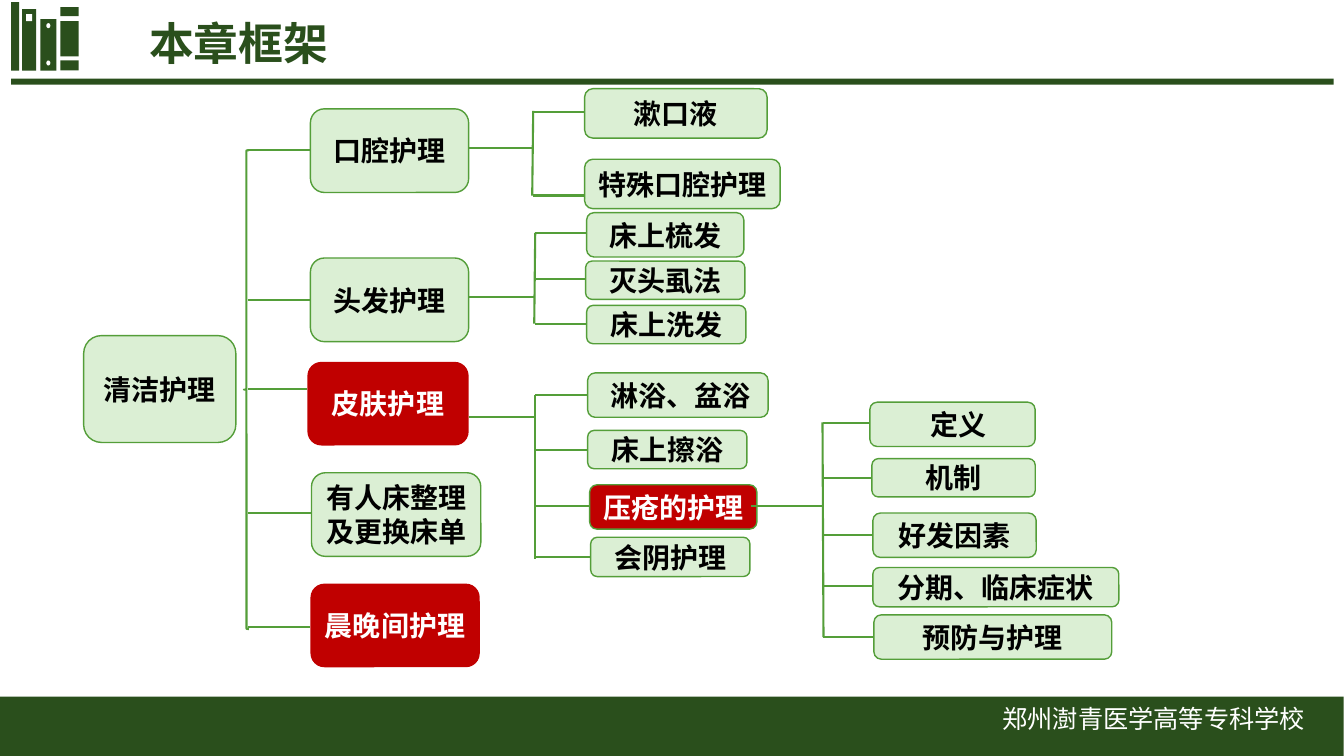
from lxml import etree
from pptx import Presentation
from pptx.dml.color import RGBColor
from pptx.enum import shapes, text
from pptx.oxml.ns import qn
from pptx.util import Emu, Pt

PX = 9144
FONT = "Noto Sans CJK SC"
COLOURS = {
    "forest": "2A4F1C",
    "leaf": "549E39",
    "mint": "DBEFD4",
    "red": "C00000",
    "white": "FFFFFF",
    "black": "000000",
}

ROOT = ("清洁护理", 83, 333, 151, 106)
CHAPTER_SPINE = 246
CHAPTERS = [
    ("口腔护理", 308, 108, 157, 83, 149),
    ("头发护理", 308, 256, 157, 83, 298),
    ("皮肤护理", 305, 359, 160, 83, 386),
    ("有人床整理及更换床单", 309, 469, 168, 83, 509),
    ("晨晚间护理", 308, 579, 168, 83, 622),
]
BRANCHES = [
    {"stem": (465, 147), "spine": (529, 110, 528, 194), "leaves": [
        ("漱口液", 580, 88, 181, 49, 111),
        ("特殊口腔护理", 580, 158, 194, 49, 194),
    ]},
    {"stem": (465, 295), "spine": (531, 231, 530, 321), "leaves": [
        ("床上梳发", 582, 211, 156, 44, 231),
        ("灭头虱法", 581, 259, 158, 38, 277),
        ("床上洗发", 582, 303, 158, 38, 321),
    ]},
    {"stem": (465, 414), "spine": (531, 392, 531, 555), "leaves": [
        ("淋浴、盆浴", 583, 370, 179, 44, 392),
        ("床上擦浴", 583, 427, 158, 38, 446),
        ("压疮的护理", 585, 481, 166, 44, 502),
        ("会阴护理", 586, 533, 158, 39, 553),
    ]},
    {"stem": (745, 502), "spine": (816, 419, 817, 632), "leaves": [
        ("定义", 863, 399, 164, 44, 420),
        ("机制", 865, 455, 162, 38, 474),
        ("好发因素", 866, 509, 162, 44, 531),
        ("分期、临床症状", 866, 563, 244, 39, 581),
        ("预防与护理", 867, 610, 236, 44, 632),
    ]},
]
FILLED_RED = {"皮肤护理", "晨晚间护理"}
OUTLINED_RED = {"压疮的护理"}
SHIFTS = {"定义": 12, "淋浴、盆浴": 6}
BOOKS = [
    (11, 2, 8, 68), (22, 9, 14, 61), (40, 19, 16, 51),
    (60, 7, 18, 9), (60, 21, 18, 35), (60, 60, 18, 10),
]
BOOK_DOTS = [(46, 23, 4, 5), (46, 60, 4, 5)]


def px(*lengths):
    return [Emu(length * PX) for length in lengths]


def rgb(name):
    return RGBColor.from_string(COLOURS[name])


def write(holder, content, size, colour="black", bold=True, align="CENTER",
          anchor="MIDDLE", left=7, right=7, wrap=True):
    frame = holder.text_frame
    frame.word_wrap = wrap
    frame.vertical_anchor = getattr(text.MSO_ANCHOR, anchor)
    frame.margin_left, frame.margin_right = px(left, right)
    frame.margin_top = frame.margin_bottom = 0
    paragraph = frame.paragraphs[0]
    paragraph.alignment = getattr(text.PP_ALIGN, align)
    run = paragraph.add_run()
    run.text = content
    font = run.font
    font.name, font.size, font.bold = FONT, Pt(size), bold
    font.color.rgb = rgb(colour)
    east_asian = etree.SubElement(run._r.get_or_add_rPr(), qn("a:ea"))
    east_asian.set("typeface", FONT)


def block(slide, kind, bounds, fill=None, outline=None, weight=1):
    preset = getattr(shapes.MSO_SHAPE, kind)
    body = slide.shapes.add_shape(preset, *px(*bounds))
    body.shadow.inherit = False
    if fill:
        body.fill.solid()
        body.fill.fore_color.rgb = rgb(fill)
    else:
        body.fill.background()
    if outline:
        body.line.color.rgb = rgb(outline)
        body.line.width = Pt(weight)
    else:
        body.line.fill.background()
    return body


def topic(slide, label, *bounds):
    red = label in FILLED_RED | OUTLINED_RED
    card = block(slide, "ROUNDED_RECTANGLE", bounds,
                 fill="red" if red else "mint",
                 outline=None if label in FILLED_RED else "leaf")
    write(card, label, 20, colour="white" if red else "black",
          left=7 + SHIFTS.get(label, 0))


def link(slide, *ends):
    wire = slide.shapes.add_connector(shapes.MSO_CONNECTOR.STRAIGHT, *px(*ends))
    wire.line.color.rgb = rgb("leaf")
    wire.line.width = Pt(1.5)
    etree.SubElement(wire._element.spPr, qn("a:effectLst"))


def spread(slide, spine_x, topics):
    for label, x, y, width, height, spur_y in topics:
        topic(slide, label, x, y, width, height)
        link(slide, spine_x, spur_y, x, spur_y)


def header(slide):
    block(slide, "RECTANGLE", (11, 78, 1312, 6), fill="forest")
    for book in BOOKS:
        block(slide, "RECTANGLE", book, fill="forest")
    block(slide, "RECTANGLE", (26, 14, 6, 7), fill="white")
    for dot in BOOK_DOTS:
        block(slide, "OVAL", dot, fill="white")
    title = slide.shapes.add_textbox(*px(138, 11, 238, 63))
    write(title, "本章框架", 32, colour="forest", align="LEFT", left=10)


def footer(slide):
    block(slide, "RECTANGLE", (0, 691, 1333, 59), fill="forest")
    school = slide.shapes.add_textbox(*px(955, 698, 379, 46))
    write(school, "郑州澍青医学高等专科学校", 18, colour="white", bold=False,
          anchor="TOP")


def main():
    deck = Presentation()
    deck.slide_width, deck.slide_height = Emu(12192000), Emu(6858000)
    slide = deck.slides.add_slide(deck.slide_layouts[6])
    header(slide)
    footer(slide)
    topic(slide, *ROOT)
    block(slide, "LEFT_BRACE", (242, 149, 5, 475), outline="leaf", weight=1.5)
    spread(slide, CHAPTER_SPINE, CHAPTERS)
    for branch in BRANCHES:
        stem_x, stem_y = branch["stem"]
        spine_x = branch["spine"][0]
        spread(slide, spine_x, branch["leaves"])
        link(slide, *branch["spine"])
        link(slide, stem_x, stem_y, spine_x, stem_y)
    deck.save("out.pptx")


if __name__ == "__main__":
    main()
